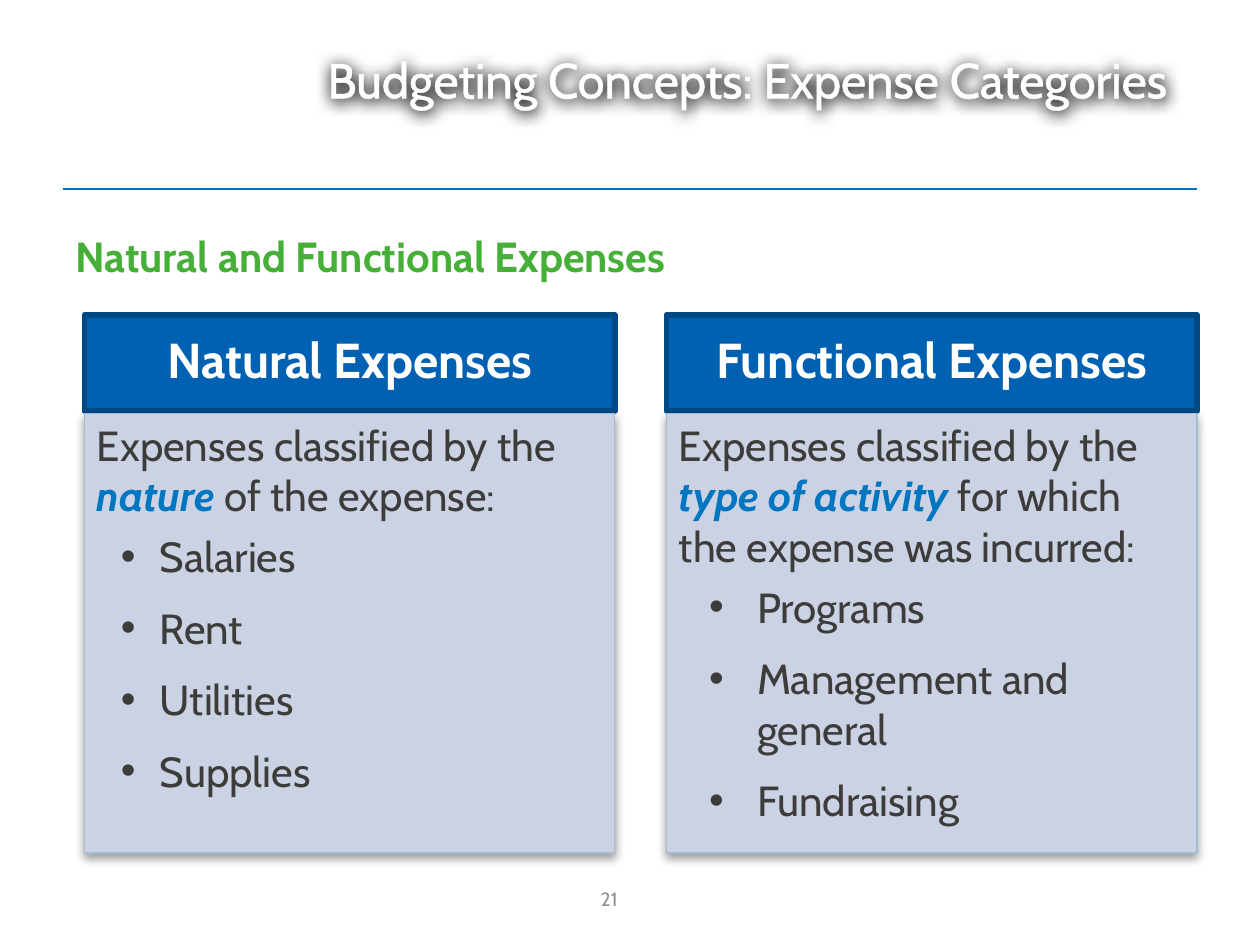
from dataclasses import dataclass

from lxml.etree import SubElement
from pptx import Presentation
from pptx.dml.color import RGBColor
from pptx.enum.shapes import MSO_CONNECTOR, MSO_SHAPE
from pptx.enum.text import MSO_ANCHOR, PP_ALIGN
from pptx.oxml import parse_xml
from pptx.oxml.ns import nsdecls, qn
from pptx.util import Inches, Pt


@dataclass(frozen=True)
class Theme:
    font: str = "Cabin"
    white: str = "FFFFFF"
    blue: str = "0061B2"
    navy: str = "004884"
    rule: str = "0070C0"
    green: str = "46AF37"
    pale: str = "CBD2E4"
    edge: str = "A4BDD5"
    ink: str = "3C3C3B"
    accent: str = "0076C0"
    gray: str = "929292"
    big: int = 28
    body: int = 24
    small: int = 11


THEME = Theme()


def color(code):
    return RGBColor.from_string(code)


def add_run(para, text, size, code, bold=False, italic=False):
    run = para.add_run()
    run.text = text
    font = run.font
    font.name, font.size = THEME.font, Pt(size)
    font.bold, font.italic = bold, italic
    font.color.rgb = color(code)
    return run


def add_shadow(shape, blur, dist, alpha):
    """Cast a black shadow straight down; alpha is in percent."""
    props = shape._element.spPr
    for old in props.findall(qn("a:effectLst")):
        props.remove(old)
    props.append(parse_xml(
        f'<a:effectLst {nsdecls("a")}>'
        f'<a:outerShdw blurRad="{Pt(blur)}" dist="{Pt(dist)}" dir="5400000" rotWithShape="0">'
        f'<a:srgbClr val="000000"><a:alpha val="{alpha * 1000}"/></a:srgbClr>'
        '</a:outerShdw></a:effectLst>'))


def add_text(slide, box, anchor):
    shape = slide.shapes.add_textbox(*map(Inches, box))
    frame = shape.text_frame
    frame.word_wrap = True
    frame.vertical_anchor = anchor
    return shape, frame.paragraphs[0]


def add_box(slide, box, fill, line, width, anchor):
    shape = slide.shapes.add_shape(MSO_SHAPE.RECTANGLE, *map(Inches, box))
    shape.shadow.inherit = False
    shape.fill.solid()
    shape.fill.fore_color.rgb = color(fill)
    shape.line.color.rgb = color(line)
    shape.line.width = Pt(width)
    frame = shape.text_frame
    frame.word_wrap = True
    frame.vertical_anchor = anchor
    return shape, frame


def add_rule(slide):
    line = slide.shapes.add_connector(
        MSO_CONNECTOR.STRAIGHT, Inches(0.5), Inches(1.5), Inches(9.5), Inches(1.5))
    line.line.color.rgb = color(THEME.rule)
    line.line.width = Pt(1.5)
    SubElement(line._element.spPr, qn("a:effectLst"))


def add_title(slide, text):
    shape, para = add_text(slide, (2.5, 0.15, 7, 0.95), MSO_ANCHOR.MIDDLE)
    shape.fill.background()
    add_shadow(shape, 8.5, 1, 100)
    run = add_run(para, text, THEME.big, THEME.white)
    # White outline around the letters
    run._r.get_or_add_rPr().insert(0, parse_xml(
        f'<a:ln {nsdecls("a")} w="{Pt(1.45)}"><a:solidFill>'
        f'<a:srgbClr val="{THEME.white}"/></a:solidFill></a:ln>'))


def add_head(slide, left, text):
    _, frame = add_box(slide, (left, 2.5, 4.21, 0.76), THEME.blue, THEME.navy,
                       3.35, MSO_ANCHOR.MIDDLE)
    frame.margin_left = frame.margin_right = Inches(0.19)
    frame.margin_top = frame.margin_bottom = Inches(0.11)
    para = frame.paragraphs[0]
    para.alignment = PP_ALIGN.CENTER
    para.line_spacing = 0.9
    add_run(para, text, THEME.big, THEME.white, bold=True)


def add_item(frame, text, indent, hang):
    para = frame.add_paragraph()
    para.alignment = PP_ALIGN.LEFT
    para.space_before = para.space_after = Pt(6)
    props = para._p.get_or_add_pPr()
    props.set("marL", str(Inches(indent)))
    props.set("indent", str(-Inches(hang)))
    SubElement(props, qn("a:buFont")).set("typeface", "Arial")
    SubElement(props, qn("a:buChar")).set("char", "•")
    add_run(para, text, THEME.body, THEME.ink)


def add_card(slide, left, intro, items, indent, hang):
    shape, frame = add_box(slide, (left, 3.28, 4.21, 3.49), THEME.pale, THEME.edge,
                           0.75, MSO_ANCHOR.TOP)
    add_shadow(shape, 5.2, 3, 40)
    before, key, after = intro
    para = frame.paragraphs[0]
    para.alignment = PP_ALIGN.LEFT
    add_run(para, before, THEME.body, THEME.ink)
    add_run(para, key, THEME.body, THEME.accent, bold=True, italic=True)
    add_run(para, after, THEME.body, THEME.ink)
    for item in items:
        add_item(frame, item, indent, hang)


def main():
    deck = Presentation()
    deck.slide_width, deck.slide_height = Inches(10), Inches(7.5)
    slide = deck.slides.add_slide(deck.slide_layouts[6])

    # Rule, page number, subtitle and title
    add_rule(slide)
    _, para = add_text(slide, (3.67, 6.93, 2.33, 0.4), MSO_ANCHOR.MIDDLE)
    para.alignment = PP_ALIGN.CENTER
    add_run(para, "21", THEME.small, THEME.gray)
    _, para = add_text(slide, (0.5, 1.58, 9, 0.7), MSO_ANCHOR.BOTTOM)
    add_run(para, "Natural and Functional Expenses", THEME.body, THEME.green, bold=True)
    add_title(slide, "Budgeting Concepts: Expense Categories")

    # Two columns: heading above a card
    lead = "Expenses classified by the "
    columns = [
        (0.67, "Natural Expenses", (lead, "nature", " of the expense:"),
         ["Salaries", "Rent", "Utilities", "Supplies"], 0.5, 0.31),
        (5.29, "Functional Expenses",
         (lead, "type of activity", " for which the expense was incurred:"),
         ["Programs", "Management and general", "Fundraising"], 0.62, 0.38),
    ]
    for left, head, *card in columns:
        add_head(slide, left, head)
        add_card(slide, left, *card)

    deck.save("out.pptx")


if __name__ == "__main__":
    main()
